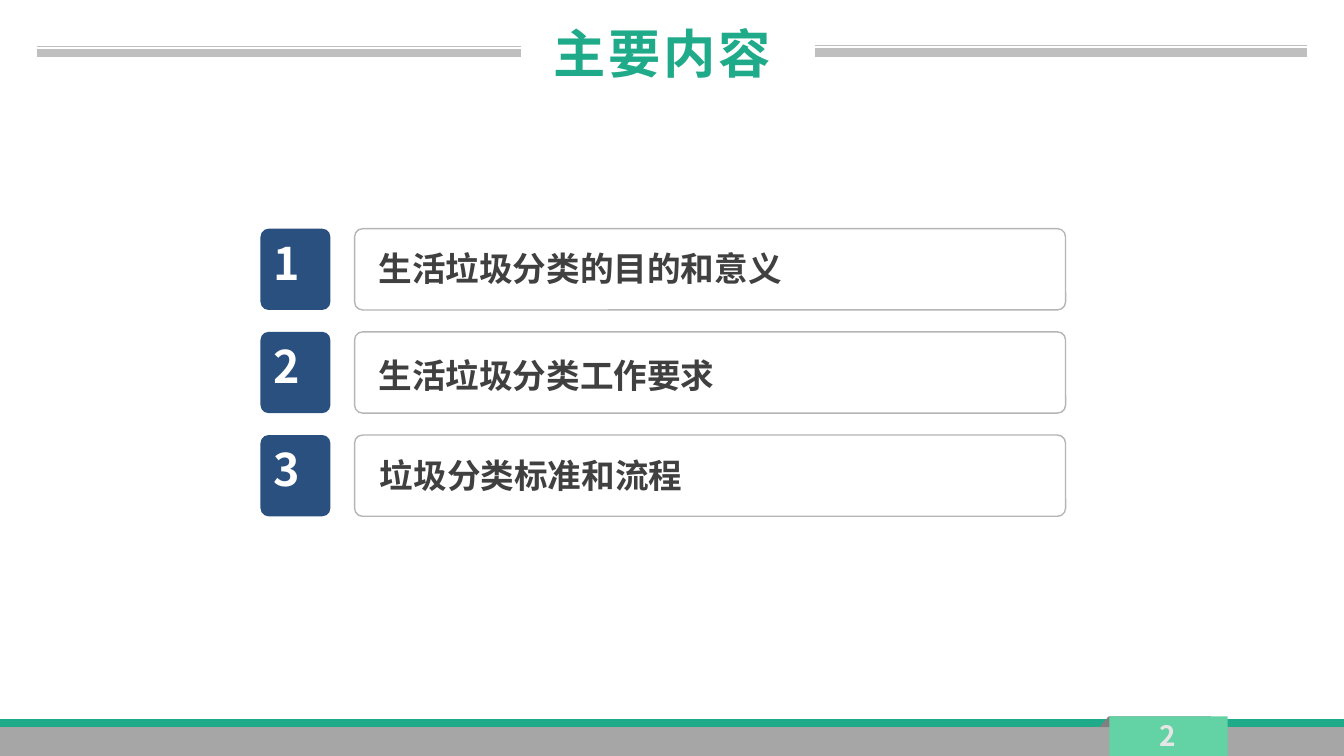
import lxml.etree
import pptx
import pptx.dml.color
import pptx.enum.shapes
import pptx.enum.text
import pptx.oxml.ns
import pptx.util

HUES = {
    "green": "1FAA89", "mint": "63D2A4", "gray": "A6A6A6", "fold": "808080",
    "rule": "BFBFBF", "navy": "29507F", "edge": "B5B5B7", "ink": "404040",
    "white": "FFFFFF", "pale": "E7E6E6",
}
FACE = "Noto Sans CJK SC"
CELL = pptx.util.Inches(0.1)
COLS, ROWS = 100, 56.25
ITEMS = [
    ("生活垃圾分类的目的和意义", 0.8, 0.9),
    ("生活垃圾分类工作要求", 0.8, 1.2),
    ("垃圾分类标准和流程", 0.9, 1),
]
KIND = pptx.enum.shapes.MSO_SHAPE
ANCHOR = pptx.enum.text.MSO_ANCHOR
ALIGN = pptx.enum.text.PP_ALIGN
FIT = pptx.enum.text.MSO_AUTO_SIZE


def span(*cells):
    """Turn grid cells into slide lengths."""
    return [round(cell * CELL) for cell in cells]


def hue(name):
    """Look up a colour by name."""
    return pptx.dml.color.RGBColor.from_string(HUES[name])


def assign(item, **values):
    """Set each format value on an object."""
    for key, value in values.items():
        setattr(item, key, value)


def paint(shape, fill, edge=None):
    """Give a shape a flat fill and an optional thin edge."""
    shape.shadow.inherit = False
    shape.fill.solid()
    shape.fill.fore_color.rgb = hue(fill)
    if edge:
        shape.line.color.rgb = hue(edge)
        shape.line.width = pptx.util.Pt(0.75)
    else:
        shape.line.fill.background()


def block(slide, box, fill, edge=None, curve=None):
    """Add a rectangle, rounded by a radius in cells if one is given."""
    kind = KIND.ROUNDED_RECTANGLE if curve else KIND.RECTANGLE
    shape = slide.shapes.add_shape(kind, *span(*box))
    if curve:
        shape.adjustments[0] = curve / min(box[2:])
    paint(shape, fill, edge)


def write(shape, text, size, color, align=ALIGN.LEFT, space=None, **frame):
    """Fill a text shape with one bold line."""
    values = {"word_wrap": True, "vertical_anchor": ANCHOR.TOP,
              "auto_size": FIT.SHAPE_TO_FIT_TEXT} | frame
    assign(shape.text_frame, **values)
    line = shape.text_frame.paragraphs[0]
    line.alignment = align
    run = line.add_run()
    run.text = text
    assign(run.font, size=pptx.util.Pt(size), bold=True, name=FACE)
    run.font.color.rgb = hue(color)
    props = run.font._element
    lxml.etree.SubElement(props, pptx.oxml.ns.qn("a:ea"), typeface=FACE)
    if space:
        props.set("spc", str(round(space * 100)))


def label(slide, box, *args, **frame):
    """Add a text box with one line."""
    write(slide.shapes.add_textbox(*span(*box)), *args, **frame)


def rules(slide, box):
    """Draw a thin line above a thick one."""
    x, y, w, h = box
    for top, width in ((y, 0.5), (y + h, 4.5)):
        kind = pptx.enum.shapes.MSO_CONNECTOR.STRAIGHT
        line = slide.shapes.add_connector(kind, *span(x, top, x + w, top))
        line.line.color.rgb = hue("rule")
        line.line.width = pptx.util.Pt(width)
        props = line._element.spPr
        lxml.etree.SubElement(props, pptx.oxml.ns.qn("a:effectLst"))


def header(slide, box):
    """Place the title between two double rules."""
    x, y, w, h = box
    rules(slide, (x + 2.75, y + 3.45, 36, 0.5))
    rules(slide, (x + 60.65, y + 3.4, 36.6, 0.5))
    title = slide.shapes.title
    place = span(x + 36.35, y + 1.1, 25.8, h)
    assign(title, **dict(zip(("left", "top", "width", "height"), place)))
    write(title, "主要内容", 28, "green", ALIGN.CENTER, 1.5)


def footer(slide, box):
    """Draw the bottom band with its folded page tab."""
    x, y, w, h = box
    block(slide, (x, y + 0.2, w, h - 0.2), "green")
    block(slide, (x, y + 0.8, w, h - 0.8), "gray")
    points = [(82.5, 0), (90.1, 0), (90.2, 0.9), (81.8, 0.8)]
    spots = [span(x + left, y + top) for left, top in points]
    fold = slide.shapes.build_freeform(*spots[0])
    fold.add_line_segments(spots[1:], close=True)
    paint(fold.convert_to_shape(), "fold")
    block(slide, (x + 82.55, y, 8.8, h), "mint")
    pad = pptx.util.Inches(0.04)
    label(slide, (x + 81.8, y - 0.25, 10.2, h + 0.4), "2", 15, "pale",
          ALIGN.CENTER, vertical_anchor=ANCHOR.MIDDLE, auto_size=FIT.NONE,
          margin_top=pad, margin_bottom=pad)


def entry(slide, box, mark, text, left, top):
    """Place a numbered tile beside its outlined bar."""
    x, y, w, h = box
    bar = x + 7
    block(slide, (x, y, 5.2, h), "navy", curve=0.6)
    label(slide, (x, y, 4.1, 5.8), mark, 24, "white")
    block(slide, (bar, y, w - 7, h), "white", "edge", 0.6)
    label(slide, (bar + left, y + top, 48.6, 4), text, 18, "ink")


def agenda(slide, box):
    """Stack the entries at an even pitch."""
    x, y, w, h = box
    gap = 1.63
    tall = (h - gap * (len(ITEMS) - 1)) / len(ITEMS)
    for index, item in enumerate(ITEMS):
        top = y + index * (tall + gap)
        entry(slide, (x, top, w, tall), str(index + 1), *item)


def main():
    """Build and save the slide."""
    deck = pptx.Presentation()
    wide, high = span(COLS, ROWS)
    assign(deck, slide_width=wide, slide_height=high)
    slide = deck.slides.add_slide(deck.slide_layouts[5])
    footer(slide, (0, 53.3, COLS, ROWS - 53.3))
    header(slide, (0, 0, COLS, 6.2))
    agenda(slide, (19.38, 17.02, 59.9, 21.4))
    deck.save("out.pptx")


if __name__ == "__main__":
    main()
